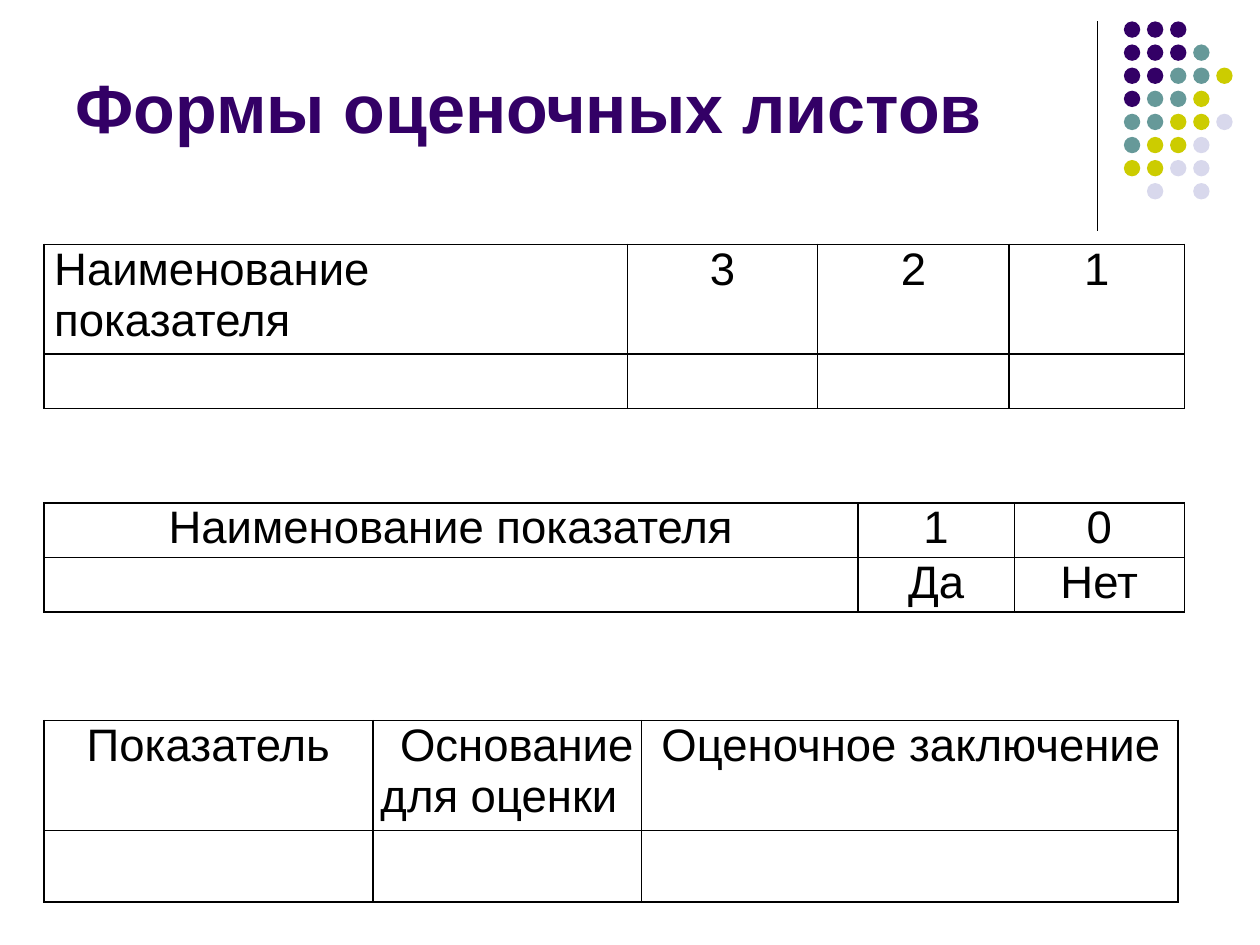
from lxml import etree
from pptx import Presentation
from pptx import util as u
from pptx.dml.color import RGBColor
from pptx.enum import shapes, text
from pptx.oxml import ns

COLORS = {"P": "330066", "T": "669999", "Y": "CCCC00", "L": "D8D8EC", "ink": "000000"}
ALIGN = {"l": text.PP_ALIGN.LEFT, "c": text.PP_ALIGN.CENTER, "j": text.PP_ALIGN.JUSTIFY}
W, H = u.Inches(10), u.Inches(7.5)


def style(p, size, color, bold=False, align="l"):
    p.alignment = ALIGN[align]
    p.font.name, p.font.size, p.font.bold = "Arial", u.Pt(size), bold
    p.font.color.rgb = RGBColor.from_string(COLORS[color])


def border(cell):
    tcPr = cell._tc.get_or_add_tcPr()
    for i, side in enumerate(("lnL", "lnR", "lnT", "lnB")):
        ln = etree.Element(ns.qn("a:" + side), w=str(u.Pt(1)))
        fill = etree.SubElement(ln, ns.qn("a:solidFill"))
        etree.SubElement(fill, ns.qn("a:srgbClr"), val=COLORS["ink"])
        tcPr.insert(i, ln)


prs = Presentation()
prs.slide_width, prs.slide_height = W, H
s = prs.slides.add_slide(prs.slide_layouts[6])

x = int(W * 0.871)
rule = s.shapes.add_connector(shapes.MSO_CONNECTOR.STRAIGHT, x, int(H * 0.0225), x, int(H * 0.244))
rule.line.color.rgb = RGBColor.from_string(COLORS["ink"])
rule.line.width = u.Pt(0.75)
etree.SubElement(rule._element.spPr, ns.qn("a:effectLst"))

dots = ["PPP", "PPPT", "PPTTY", "PTTY", "TTYYL", "TYYL", "YYLL", " L L"]
pitch, size = W * 11 // 600, int(W * 0.013)
for row, line in enumerate(dots):
    for col, key in enumerate(line):
        if key == " ":
            continue
        dot = s.shapes.add_shape(shapes.MSO_SHAPE.OVAL, int(W * 0.892) + col * pitch,
                                 int(W * 0.017) + row * pitch, size, size)
        dot.shadow.inherit = False
        dot.fill.solid()
        dot.fill.fore_color.rgb = RGBColor.from_string(COLORS[key])
        dot.line.fill.background()

title = s.shapes.add_textbox(int(W * 0.05), int(H * 0.0173), int(W * 0.825), int(H * 0.19))
tf = title.text_frame
tf.word_wrap = True
tf.vertical_anchor = text.MSO_ANCHOR.MIDDLE
p = tf.paragraphs[0]
p.text = "Формы оценочных листов"
style(p, 39, "P", bold=True)

tables = [
    (0.2587, 0.08, [0.463, 0.151, 0.152, 0.139], [0.116, 0.0573], "lccc",
     [["Наименование показателя", "3", "2", "1"], [""] * 4]),
    (0.532, 0.07, [0.646, 0.124, 0.135], [0.0577, 0.0577], "ccc",
     [["Наименование показателя", "1", "0"], ["", "Да", "Нет"]]),
    (0.7627, 0.06, [0.261, 0.213, 0.426], [0.116, 0.076], "cjl",
     [["Показатель", " Основание для оценки", " Оценочное заключение"], [""] * 3]),
]
for top, margin, cols, rows, aligns, content in tables:
    frame = s.shapes.add_table(len(rows), len(cols), int(W * 0.035), int(H * top),
                               int(W * sum(cols)), int(H * sum(rows)))
    tbl = frame.table
    tbl.first_row = tbl.horz_banding = False
    for column, share in zip(tbl.columns, cols):
        column.width = int(W * share)
    for r, share in enumerate(rows):
        tbl.rows[r].height = int(H * share)
        for c, align in enumerate(aligns):
            cell = tbl.cell(r, c)
            cell.fill.background()
            cell.margin_left = cell.margin_right = u.Inches(margin)
            cell.margin_top = cell.margin_bottom = 0
            p = cell.text_frame.paragraphs[0]
            p.text = content[r][c]
            style(p, 26, "ink", align=align)
            border(cell)

prs.save("out.pptx")
